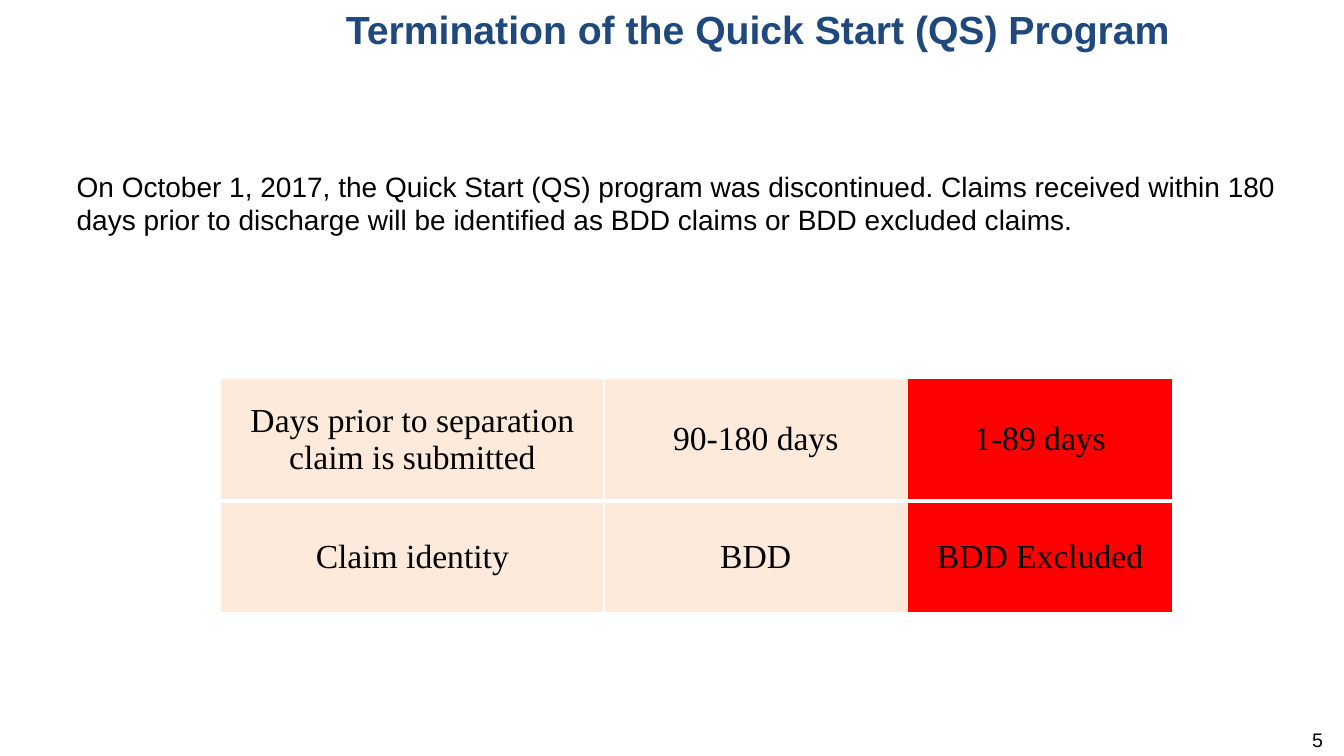
from dataclasses import dataclass
from lxml.etree import SubElement
from pptx import Presentation
from pptx.dml.color import RGBColor as RGB
from pptx.enum.text import MSO_ANCHOR as Anchor, MSO_AUTO_SIZE as Fit, PP_ALIGN as Align
from pptx.oxml.ns import qn
from pptx.util import Inches, Pt


@dataclass
class Theme:
    sans: str = "Arial"
    serif: str = "Times New Roman"
    navy: str = "1F497D"
    black: str = "000000"
    white: str = "FFFFFF"
    peach: str = "FDEADA"
    red: str = "FF0000"
    head: int = 28
    text: int = 20
    cell: int = 24
    page: int = 14


class Deck:
    def __init__(self, theme):
        self.theme = theme
        self.prs = Presentation()
        self.prs.slide_width, self.prs.slide_height = Inches(13.33), Inches(7.5)
        self.slide = self.prs.slides.add_slide(self.prs.slide_layouts[1])

    def place(self, shape, x, y, w, h):
        shape.left, shape.top = Inches(x), Inches(y)
        shape.width, shape.height = Inches(w), Inches(h)

    def style(self, frame, size, color, face, align, bold=False):
        for para in frame.paragraphs:
            para.alignment = align
            para.space_before = Pt(0)
            for run in para.runs:
                font = run.font
                font.size, font.name, font.bold = Pt(size), face, bold
                font.color.rgb = RGB.from_string(color)

    def fill(self, shape, text, box):
        self.place(shape, *box)
        frame = shape.text_frame
        frame.text = text
        frame.word_wrap = True
        frame.auto_size = Fit.NONE
        frame.vertical_anchor = Anchor.TOP
        return frame

    def title(self, text, box):
        t = self.theme
        frame = self.fill(self.slide.shapes.title, text, box)
        self.style(frame, t.head, t.navy, t.sans, Align.CENTER, True)

    def body(self, text, box):
        t = self.theme
        frame = self.fill(self.slide.placeholders[1], text, box)
        para = frame.paragraphs[0]
        props = para._p.get_or_add_pPr()
        props.set("marL", "0")
        props.set("indent", "0")
        SubElement(props, qn("a:buNone"))
        para.space_after = Pt(6)
        self.style(frame, t.text, t.black, t.sans, Align.LEFT)

    def number(self, text, box):
        t = self.theme
        frame = self.fill(self.slide.shapes.add_textbox(0, 0, 0, 0), text, box)
        frame.margin_top = 0
        self.style(frame, t.page, t.black, t.sans, Align.RIGHT)

    def border(self, cell, sides):
        # Borders go ahead of the cell fill
        props = cell._tc.get_or_add_tcPr()
        for spot, (side, width) in enumerate(sides.items()):
            line = SubElement(props, qn(f"a:ln{side}"), w=str(Pt(width)))
            paint = SubElement(line, qn("a:solidFill"))
            SubElement(paint, qn("a:srgbClr"), val=self.theme.white)
            props.insert(spot, line)

    def table(self, rows, fills, x, y, wide, high):
        t = self.theme
        frame = self.slide.shapes.add_table(
            len(high), len(wide), Inches(x), Inches(y),
            Inches(sum(wide)), Inches(sum(high)))
        grid = frame.table
        grid.first_row = grid.horz_banding = False
        for col, w in zip(grid.columns, wide):
            col.width = Inches(w)
        for r, row in enumerate(rows):
            grid.rows[r].height = Inches(high[r])
            for c, text in enumerate(row):
                cell = grid.cell(r, c)
                cell.text_frame.text = text
                cell.vertical_anchor = Anchor.MIDDLE
                cell.fill.solid()
                cell.fill.fore_color.rgb = RGB.from_string(fills[c])
                self.style(cell.text_frame, t.cell, t.black, t.serif, Align.CENTER)
                # Thick rule between the two rows
                self.border(cell, {"L": 1, "R": 1, "T": 3 if r else 1,
                                   "B": 1 if r else 3})


def main():
    theme = Theme()
    deck = Deck(theme)

    # Heading and message
    deck.title("Termination of the Quick Start (QS) Program", (2.34, 0, 10.35, 1.26))
    deck.body("On October 1, 2017, the Quick Start (QS) program was discontinued. "
              "Claims received within 180 days prior to discharge will be identified "
              "as BDD claims or BDD excluded claims.", (0.66, 1.63, 12.68, 4.99))

    # Page number
    deck.number("5", (10.11, 7.22, 3.11, 0.4))

    # Claim types by days before separation
    rows = [
        ["Days prior to separation claim is submitted", "90-180 days", "1-89 days"],
        ["Claim identity", "BDD", "BDD Excluded"],
    ]
    deck.table(rows, [theme.peach, theme.peach, theme.red],
               2.19, 3.75, [3.8, 3.01, 2.63], [1.22, 1.11])

    deck.prs.save("out.pptx")


if __name__ == "__main__":
    main()
